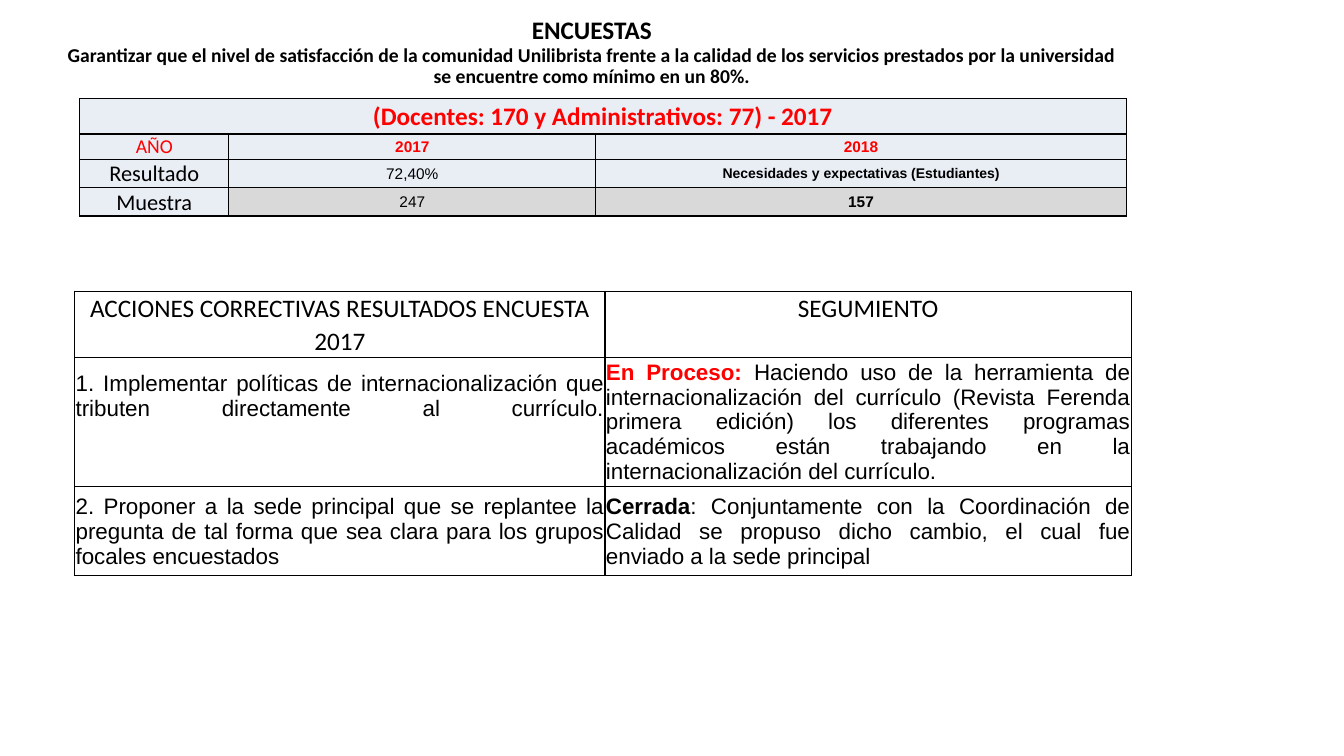
from lxml import etree
from pptx import Presentation
from pptx.dml.color import RGBColor
from pptx.enum import text
from pptx.oxml import ns
from pptx.util import Inches, Pt

BLACK = RGBColor(0x00, 0x00, 0x00)
RED = RGBColor(0xFF, 0x00, 0x00)
WHITE = RGBColor(0xFF, 0xFF, 0xFF)
PALE_BLUE = RGBColor(0xE9, 0xED, 0xF4)
GREY = RGBColor(0xD9, 0xD9, 0xD9)

CENTER, JUSTIFY = text.PP_ALIGN.CENTER, text.PP_ALIGN.JUSTIFY
TOP, MIDDLE = text.MSO_ANCHOR.TOP, text.MSO_ANCHOR.MIDDLE
TIGHT = (0.01, 0.01, 0.01, 0)
HEADER = (0.05, 0, 0.05, 0)


def add_run(p, words, size, font="Arial", color=BLACK, bold=False):
    r = p.add_run()
    r.text = words
    r.font.size = Pt(size)
    r.font.name = font
    r.font.bold = bold
    r.font.color.rgb = color


def set_insets(box, insets):
    (box.margin_left, box.margin_top,
     box.margin_right, box.margin_bottom) = map(Inches, insets)


def add_borders(cell):
    tc_pr = cell._tc.get_or_add_tcPr()
    for i, side in enumerate(("lnL", "lnR", "lnT", "lnB")):
        ln = etree.Element(ns.qn(f"a:{side}"), w=str(Pt(1)))
        fill = etree.SubElement(ln, ns.qn("a:solidFill"))
        etree.SubElement(fill, ns.qn("a:srgbClr"), val=str(BLACK))
        tc_pr.insert(i, ln)


def add_grid(s, left, top, widths, heights):
    """Add a plain table with bordered cells."""
    box = map(Inches, (left, top, sum(widths), sum(heights)))
    table = s.shapes.add_table(len(heights), len(widths), *box).table
    table.first_row = table.horz_banding = False
    for column, width in zip(table.columns, widths):
        column.width = Inches(width)
    for row, height in zip(table.rows, heights):
        row.height = Inches(height)
    for cell in table.iter_cells():
        add_borders(cell)
    return table


def fill_cell(cell, fill, align, anchor=MIDDLE, insets=TIGHT):
    """Format a cell and return its paragraph."""
    cell.fill.solid()
    cell.fill.fore_color.rgb = fill
    cell.vertical_anchor = anchor
    set_insets(cell, insets)
    p = cell.text_frame.paragraphs[0]
    p.alignment = align
    return p


def add_title(s, left, top, width, height):
    sp = s.shapes.title
    sp.left, sp.top, sp.width, sp.height = map(Inches, (left, top, width, height))
    tf = sp.text_frame
    tf.word_wrap = True
    tf.auto_size = text.MSO_AUTO_SIZE.NONE
    tf.vertical_anchor = text.MSO_ANCHOR.BOTTOM
    p = tf.paragraphs[0]
    p.alignment = CENTER
    p.line_spacing = 0.9
    add_run(p, "ENCUESTAS", 18, "Calibri", bold=True)
    p.add_line_break()
    add_run(p, "Garantizar que el nivel de satisfacción de la comunidad Unilibrista "
               "frente a la calidad de los servicios prestados por la universidad "
               "se encuentre como mínimo en un 80%.", 14, "Calibri", bold=True)


def add_results(s, left, top):
    table = add_grid(s, left, top, (1.48, 3.64, 5.26), (0.35, 0.25, 0.28, 0.28))
    table.cell(0, 0).merge(table.cell(0, 2))
    p = fill_cell(table.cell(0, 0), PALE_BLUE, CENTER)
    add_run(p, "(Docentes: 170 y Administrativos: 77) - 2017", 18, "Calibri", RED, True)
    rows = [
        [("AÑO", 14, "Calibri", RED), ("2017", 11, "Arial", RED, True),
         ("2018", 11, "Arial", RED, True)],
        [("Resultado", 16, "Calibri"), ("72,40%", 11),
         ("Necesidades y expectativas (Estudiantes)", 10, "Arial", BLACK, True)],
        [("Muestra", 16, "Calibri"), ("247", 11),
         ("157", 11, "Arial", BLACK, True)],
    ]
    for i, row in enumerate(rows, 1):
        for j, run in enumerate(row):
            fill = GREY if i == 3 and j > 0 else PALE_BLUE
            add_run(fill_cell(table.cell(i, j), fill, CENTER), *run)


def add_actions(s, left, top):
    table = add_grid(s, left, top, (5.26, 5.22), (0.65, 1.28, 0.89))
    headers = (("ACCIONES CORRECTIVAS RESULTADOS ENCUESTA 2017", MIDDLE),
               ("SEGUMIENTO", TOP))
    for j, (words, anchor) in enumerate(headers):
        p = fill_cell(table.cell(0, j), WHITE, CENTER, anchor, HEADER)
        p.line_spacing = 1.07
        add_run(p, words, 18, "Calibri")

    p = fill_cell(table.cell(1, 0), WHITE, JUSTIFY, TOP, (0.01, 0.14, 0.01, 0))
    add_run(p, "1. Implementar políticas de internacionalización que tributen "
               "directamente al currículo.", 16)
    p.add_line_break()  # stretches the last line to full width

    p = fill_cell(table.cell(1, 1), WHITE, JUSTIFY)
    add_run(p, "En Proceso: ", 16, color=RED, bold=True)
    add_run(p, "Haciendo uso de la herramienta de internacionalización del currículo "
               "(Revista Ferenda primera edición) los diferentes programas académicos "
               "están trabajando en la internacionalización del currículo.", 16)

    p = fill_cell(table.cell(2, 0), WHITE, JUSTIFY)
    add_run(p, "2. Proponer a la sede principal que se replantee la pregunta de tal "
               "forma que sea clara para los grupos focales encuestados", 16)

    p = fill_cell(table.cell(2, 1), WHITE, JUSTIFY)
    add_run(p, "Cerrada", 16, bold=True)
    add_run(p, ": Conjuntamente con la Coordinación de Calidad se propuso dicho "
               "cambio, el cual fue enviado a la sede principal", 16)


def main():
    prs = Presentation()
    prs.slide_width, prs.slide_height = Inches(13.33), Inches(7.5)
    s = prs.slides.add_slide(prs.slide_layouts.get_by_name("Title Only"))
    add_title(s, 0.51, 0.23, 10.72, 0.69)
    add_results(s, 0.79, 0.98)
    add_actions(s, 0.74, 2.89)
    prs.save("out.pptx")


if __name__ == "__main__":
    main()
